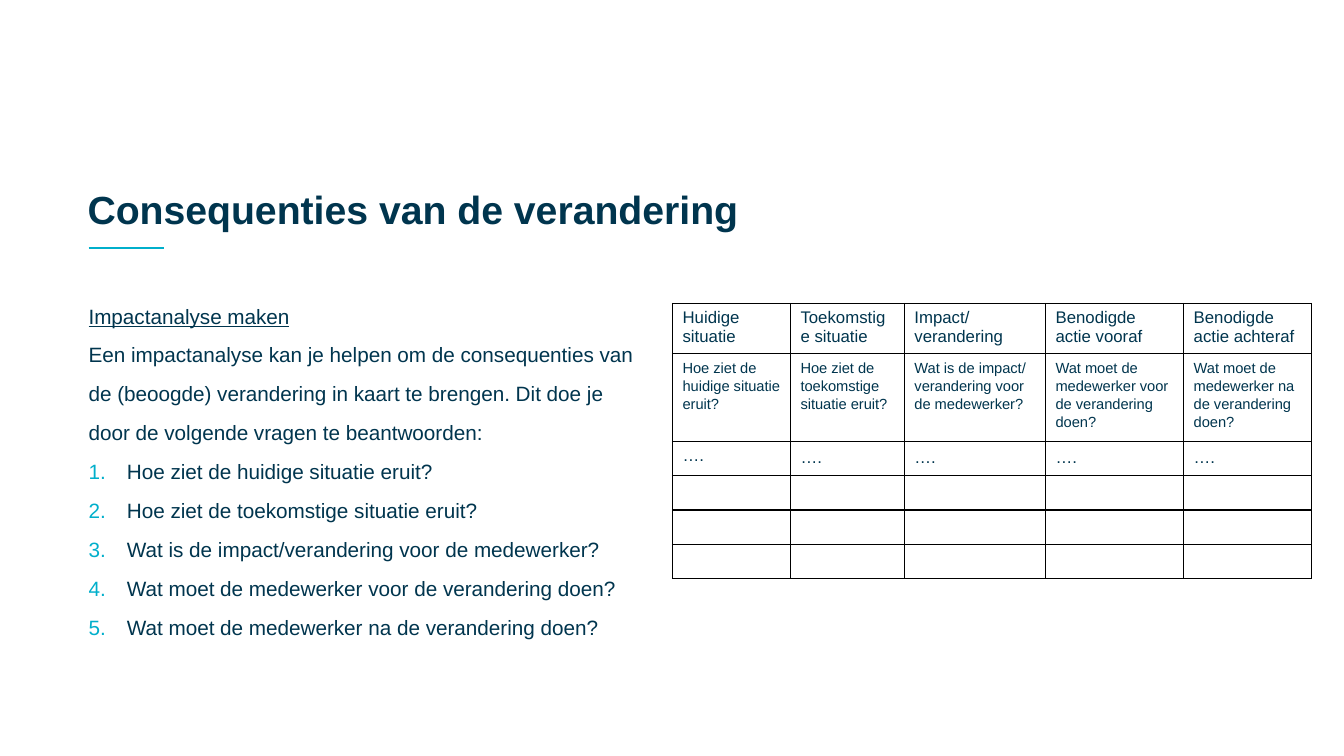
"""Build the slide on the consequences of a change, with its impact analysis table."""
from dataclasses import dataclass

from lxml import etree
from pptx import Presentation
from pptx import util as u
from pptx.dml.color import RGBColor
from pptx.enum import shapes, text
from pptx.oxml import ns

NAVY = RGBColor(0x00, 0x35, 0x4E)
CYAN = RGBColor(0x00, 0xAF, 0xCB)
BLACK = RGBColor(0x00, 0x00, 0x00)
FONT = "Arial"


@dataclass
class Para:
    text: str
    underline: bool = False
    numbered: bool = False


@dataclass
class Column:
    width: float
    heading: str
    question: str
    dots_spacing: float = 1.1


BODY = [
    Para("Impactanalyse maken", underline=True),
    Para("Een impactanalyse kan je helpen om de consequenties van de (beoogde) verandering "
         "in kaart te brengen. Dit doe je door de volgende vragen te beantwoorden:"),
    Para("Hoe ziet de huidige situatie eruit?", numbered=True),
    Para("Hoe ziet de toekomstige situatie eruit?", numbered=True),
    Para("Wat is de impact/verandering voor de medewerker?", numbered=True),
    Para("Wat moet de medewerker voor de verandering doen?", numbered=True),
    Para("Wat moet de medewerker na de verandering doen?", numbered=True),
]
COLUMNS = [
    Column(1.17, "Huidige situatie", "Hoe ziet de huidige situatie eruit?", 1.0),
    Column(1.13, "Toekomstige situatie", "Hoe ziet de toekomstige situatie eruit?"),
    Column(1.4, "Impact/ verandering", "Wat is de impact/ verandering voor de medewerker?"),
    Column(1.37, "Benodigde actie vooraf", "Wat moet de medewerker voor de verandering doen?"),
    Column(1.27, "Benodigde actie achteraf", "Wat moet de medewerker na de verandering doen?"),
]
ROW_HEIGHTS = [0.48, 0.81] + [0.34] * 4


def sub(parent, tag: str, **attrs: str):
    return etree.SubElement(parent, ns.qn(tag), attrs)


def style(p, size: float, bold: bool = False, underline: bool = False) -> None:
    f = p.font
    f.name, f.size, f.bold, f.underline = FONT, u.Pt(size), bold, underline
    f.color.rgb = NAVY


def add_box(s, left: float, top: float, width: float, height: float):
    tf = s.shapes.add_textbox(*map(u.Inches, (left, top, width, height))).text_frame
    tf.word_wrap = True
    return tf


def add_rule(s) -> None:
    y = u.Inches(2.46)
    line = s.shapes.add_connector(shapes.MSO_CONNECTOR.STRAIGHT, u.Inches(0.88), y,
                                  u.Inches(1.63), y)
    line.line.color.rgb = CYAN
    line.line.width = u.Pt(1.5)
    sub(line._element.spPr, "a:effectLst")


def add_title(s) -> None:
    tf = add_box(s, 0.77, 1.33, 11.8, 1.03)
    tf.vertical_anchor = text.MSO_ANCHOR.BOTTOM
    p = tf.paragraphs[0]
    p.text = "Consequenties van de verandering"
    p.line_spacing = 0.9
    style(p, 28, bold=True)


def add_body(s, paras: list[Para]) -> None:
    tf = add_box(s, 0.77, 2.82, 5.61, 3.84)
    for i, para in enumerate(paras):
        p = tf.add_paragraph() if i else tf.paragraphs[0]
        p.text = para.text
        pPr = p._p.get_or_add_pPr()
        pPr.set("marL", str(u.Inches(0.39 if para.numbered else 0.01)))
        pPr.set("indent", str(u.Inches(-0.38 if para.numbered else 0)))
        if para.numbered:
            sub(sub(pPr, "a:buClr"), "a:srgbClr", val=str(CYAN))
            sub(pPr, "a:buFont", typeface=FONT)
            sub(pPr, "a:buAutoNum", type="arabicPeriod")
        p.line_spacing = 1.57
        style(p, 14.8, underline=para.underline)


def add_borders(cell) -> None:
    tcPr = cell._tc.get_or_add_tcPr()
    for side in ("a:lnL", "a:lnR", "a:lnT", "a:lnB"):
        ln = sub(tcPr, side, w=str(u.Pt(1)))
        sub(sub(ln, "a:solidFill"), "a:srgbClr", val=str(BLACK))


def fill_cell(cell, wording: str, size: float, spacing: float) -> None:
    add_borders(cell)
    cell.fill.background()
    p = cell.text_frame.paragraphs[0]
    if wording:
        p.text = wording
        p.line_spacing = spacing
    else:
        sub(p._p, "a:endParaRPr", sz=str(int(size * 100)))
    style(p, size)


def add_impact_table(s, columns: list[Column]) -> None:
    width = sum(c.width for c in columns)
    table = s.shapes.add_table(len(ROW_HEIGHTS), len(columns), u.Inches(6.67), u.Inches(3.01),
                               u.Inches(width), u.Inches(sum(ROW_HEIGHTS))).table
    table.first_row = table.horz_banding = False
    for row, height in zip(table.rows, ROW_HEIGHTS):
        row.height = u.Inches(height)
    for j, col in enumerate(columns):
        table.columns[j].width = u.Inches(col.width)
        entries = [(col.heading, 12, 1.0), (col.question, 10.5, 1.1),
                   ("….", 12, col.dots_spacing)]
        entries += [("", 12, 1.0)] * (len(ROW_HEIGHTS) - len(entries))
        for i, entry in enumerate(entries):
            fill_cell(table.cell(i, j), *entry)


def main() -> None:
    prs = Presentation()
    prs.slide_width, prs.slide_height = u.Inches(13.33), u.Inches(7.5)
    s = prs.slides.add_slide(prs.slide_layouts[6])
    add_rule(s)
    add_title(s)
    add_body(s, BODY)
    add_impact_table(s, COLUMNS)
    prs.save("out.pptx")


if __name__ == "__main__":
    main()
